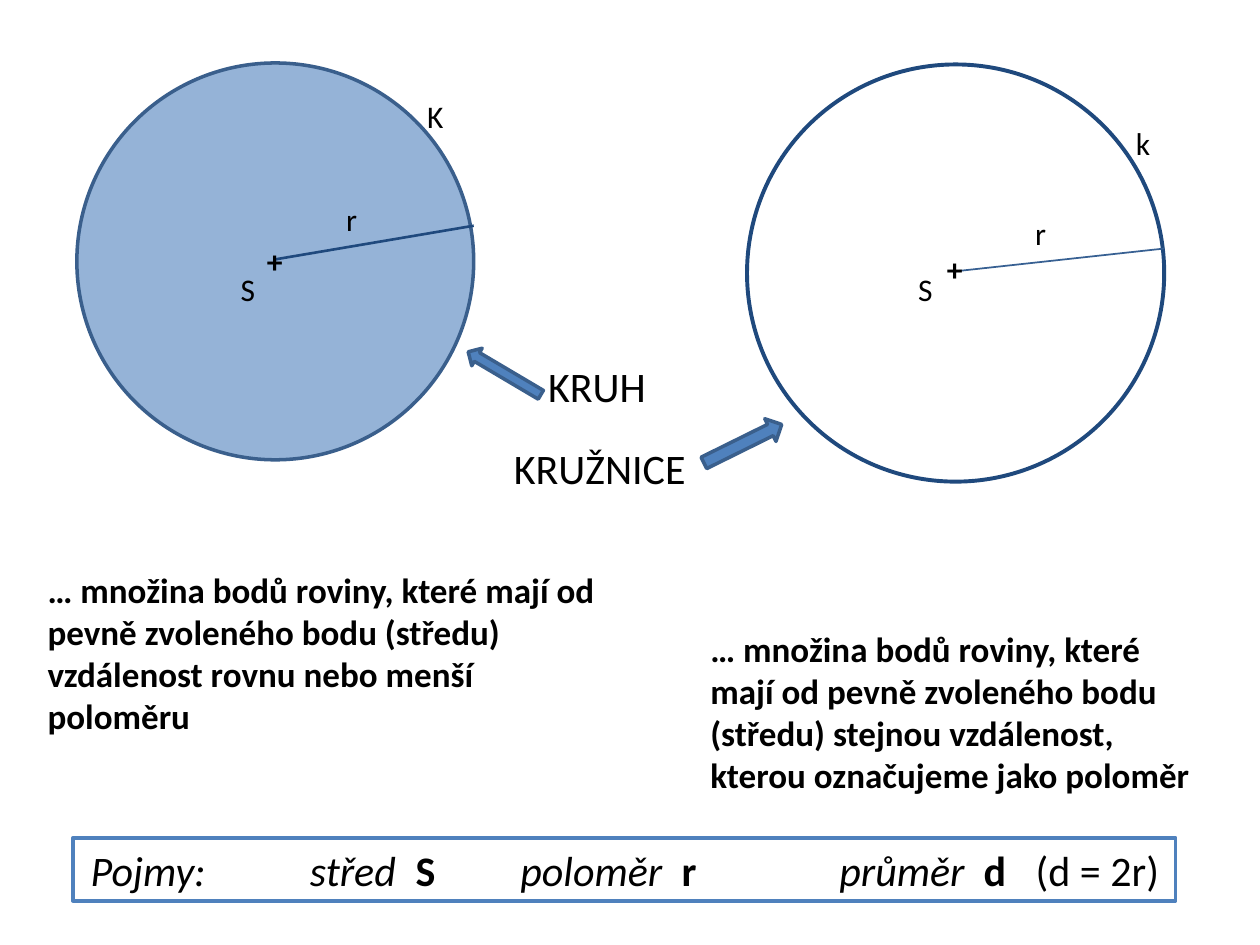
from lxml import etree
from pptx import Presentation
from pptx.dml.color import RGBColor
from pptx.enum.shapes import MSO_CONNECTOR, MSO_SHAPE
from pptx.enum.text import MSO_ANCHOR
from pptx.oxml.ns import qn
from pptx.util import Cm, Pt

NAVY, EDGE, BLUE = "1F497D", "3A5F8C", "4F81BD"


def rgb(value):
    return RGBColor.from_string(value)


def style_run(r, size, bold=False, italic=False):
    f = r.font
    f.name, f.size, f.bold, f.italic = "Calibri", Pt(size), bold, italic
    f.color.rgb = rgb("000000")


def add_text(slide, box, text, size, bold=False, wrap=False):
    tf = slide.shapes.add_textbox(*map(Cm, box)).text_frame
    tf.word_wrap = wrap
    tf.text = text
    style_run(tf.paragraphs[0].runs[0], size, bold)


def add_shape(slide, kind, box, fill, line, width=2):
    sp = slide.shapes.add_shape(kind, *map(Cm, box))
    sp.shadow.inherit = False
    sp.fill.solid()
    sp.fill.fore_color.rgb = rgb(fill)
    sp.line.color.rgb = rgb(line)
    sp.line.width = Pt(width)
    return sp


def add_line(slide, start, end, color, width):
    line = slide.shapes.add_connector(
        MSO_CONNECTOR.STRAIGHT, *map(Cm, (*start, *end)))
    line.line.color.rgb = rgb(color)
    line.line.width = Pt(width)
    etree.SubElement(line._element.spPr, qn("a:effectLst"))


def add_circle(slide, box, outline, radius, labels):
    """Draw a circle with its radius and labels; offsets are from the box corner."""
    x, y = box[:2]
    add_shape(slide, MSO_SHAPE.OVAL, box, *outline)
    start, end, color, width = radius
    add_line(slide, (x + start[0], y + start[1]), (x + end[0], y + end[1]), color, width)
    for text, dx, dy in labels:
        add_text(slide, (x + dx, y + dy, 0.82, 1.02), text, 18, bold=text == "+")


def add_pointer(slide, box, name, arrow, angle):
    """Name a circle and point an arrow at it; the arrow is offset from the box corner."""
    add_text(slide, box, name, 24)
    dx, dy, width, height = arrow
    sp = add_shape(slide, MSO_SHAPE.RIGHT_ARROW,
                   (box[0] + dx, box[1] + dy, width, height), BLUE, EDGE)
    sp.rotation = angle


def add_terms(slide, box, parts, stops):
    """Lay out (text, bold, italic) parts on tab stops in a framed bar."""
    sp = add_shape(slide, MSO_SHAPE.RECTANGLE, box, "FFFFFF", BLUE)
    tf = sp.text_frame
    tf.margin_left, tf.margin_right = Cm(0.36), 0
    tf.vertical_anchor = MSO_ANCHOR.MIDDLE
    p = tf.paragraphs[0]
    pPr = p._p.get_or_add_pPr()
    pPr.set("algn", "l")
    tabs = etree.SubElement(pPr, qn("a:tabLst"))
    for stop in stops:
        etree.SubElement(tabs, qn("a:tab"), pos=str(Cm(stop)), algn="l")
    for i, (text, bold, italic) in enumerate(parts):
        r = p.add_run()
        r.text = "\t" + text if i else text
        style_run(r, 24, bold, italic)


def main():
    prs = Presentation()
    prs.slide_width, prs.slide_height = Cm(25.4), Cm(19.05)
    slide = prs.slides.add_slide(prs.slide_layouts[6])

    add_circle(slide, (1.55, 1.27, 8, 8), ("95B3D7", EDGE, 2),
               ((8, 3.28), (3.99, 3.96), NAVY, 1.5),
               [("+", 3.58, 3.49), ("S", 3.05, 4.04), ("r", 5.18, 2.64), ("K", 6.81, 0.56)])
    add_circle(slide, (15.06, 1.3, 8.41, 8.41), ("FFFFFF", NAVY, 2.25),
               ((8.41, 3.71), (4.19, 4.17), "376092", 1),
               [("+", 3.78, 3.61), ("S", 3.2, 4.01), ("r", 5.56, 2.9), ("k", 7.59, 1.07)])

    add_pointer(slide, (10.8, 7.14, 2.51, 1.27), "KRUH", (-1.48, 0.18, 1.7, 0.41), 210.6)
    add_pointer(slide, (10.11, 8.79, 4.01, 1.27), "KRUŽNICE", (3.99, -0.1, 1.75, 0.51), 333.7)

    add_text(slide, (0.71, 11.33, 11.99, 3.68),
             "… množina bodů roviny, které mají od pevně zvoleného bodu (středu) "
             "vzdálenost rovnu nebo menší poloměru", 20, bold=True, wrap=True)
    add_text(slide, (14.07, 12.52, 10.39, 3.68),
             "… množina bodů roviny, které mají od pevně zvoleného bodu (středu) "
             "stejnou vzdálenost, kterou označujeme jako poloměr", 20, bold=True, wrap=True)

    add_terms(slide, (1.47, 16.89, 22.23, 1.27),
              [("Pojmy:", False, True),
               ("střed", False, True), ("S", True, False),
               ("poloměr", False, True), ("r", True, False),
               ("průměr", False, True), ("d", True, False),
               ("(d = 2r)", False, False)],
              (4.42, 6.55, 8.66, 11.91, 15.09, 18, 19.05))

    prs.save("out.pptx")


if __name__ == "__main__":
    main()
